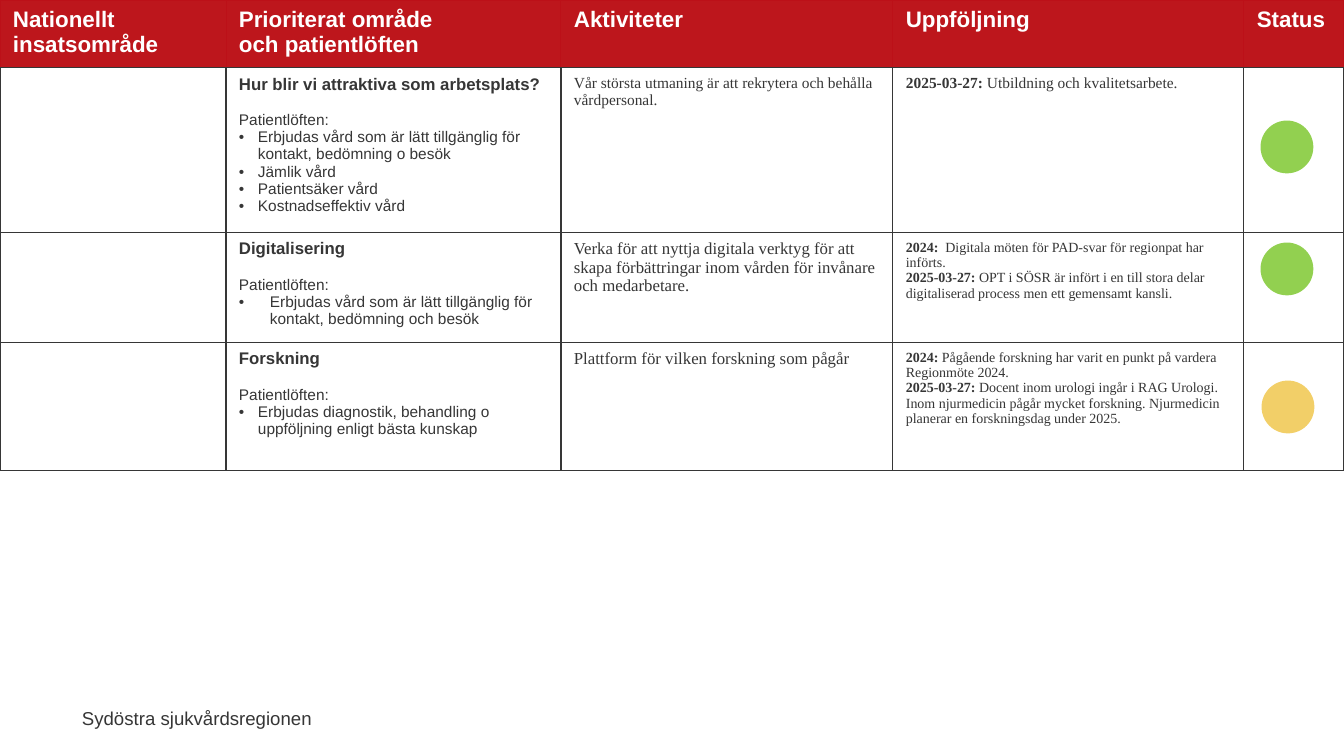
from lxml.etree import SubElement
from pptx import Presentation
from pptx.dml.color import RGBColor
from pptx.enum.shapes import MSO_SHAPE as Shape
from pptx.enum.text import PP_ALIGN as Align
from pptx.oxml.ns import qn
from pptx.util import Emu, Pt

PX = 914400 / 100.8
DARK = RGBColor(0x36, 0x36, 0x36)
RED = RGBColor(0xBC, 0x10, 0x18)
HEADER_FILL = RGBColor(0xBD, 0x16, 0x1C)
WHITE = RGBColor(0xFF, 0xFF, 0xFF)
GREEN = RGBColor(0x92, 0xD0, 0x50)
YELLOW = RGBColor(0xF2, 0xCF, 0x68)
SANS, SERIF = "Arial", "Times New Roman"

COLUMNS = [226, 335, 332, 351, 100]
ROWS = [67, 165, 110, 128]
HEADERS = ["Nationellt insatsområde", "Prioriterat område\voch patientlöften",
           "Aktiviteter", "Uppföljning", "Status"]
# Each area: heading, bullet indent, promises, activity, its size, follow-ups, their size
AREAS = [
    ("Hur blir vi attraktiva som arbetsplats?", 19,
     ["Erbjudas vård som är lätt tillgänglig för kontakt, bedömning o besök",
      "Jämlik vård", "Patientsäker vård", "Kostnadseffektiv vård"],
     "Vår största utmaning är att rekrytera och behålla vårdpersonal.", 11,
     [("2025-03-27: ", "Utbildning och kvalitetsarbete.")], 11),
    ("Digitalisering", 31,
     ["Erbjudas vård som är lätt tillgänglig för kontakt, bedömning och besök"],
     "Verka för att nyttja digitala verktyg för att skapa förbättringar inom "
     "vården för invånare och medarbetare.", 12,
     [("2024: ", " Digitala möten för PAD-svar för regionpat har införts."),
      ("2025-03-27: ", "OPT i SÖSR är infört i en till stora delar "
       "digitaliserad process men ett gemensamt kansli.")], 10),
    ("Forskning", 19,
     ["Erbjudas diagnostik, behandling o uppföljning enligt bästa kunskap"],
     "Plattform för vilken forskning som pågår", 12,
     [("2024: ", "Pågående forskning har varit en punkt på vardera Regionmöte 2024."),
      ("2025-03-27: ", "Docent inom urologi ingår i RAG Urologi. Inom njurmedicin "
       "pågår mycket forskning. Njurmedicin planerar en forskningsdag under 2025.")], 10),
]
STATUSES = [(1262, 122, GREEN), (1262, 244, GREEN), (1263, 382, YELLOW)]


def px(n):
    return Emu(round(n * PX))


def add_text(tf, text, lead="", size=11, font=SANS, color=DARK, bold=False,
             before=0, indent=0, align=Align.LEFT):
    """Add a paragraph, with an optional bold lead and a bullet if indented."""
    p = tf.add_paragraph() if tf.paragraphs[0].runs else tf.paragraphs[0]
    p.alignment = align
    if before:
        p.space_before = Pt(before)
    if indent:
        pPr = p._p.get_or_add_pPr()
        pPr.set("marL", str(px(indent)))
        pPr.set("indent", str(-px(indent)))
        SubElement(pPr, qn("a:buFont"), typeface=SANS)
        SubElement(pPr, qn("a:buChar"), char="•")
    for part, is_bold in ((lead, True), (text, bold)):
        if part:
            # A vertical tab in the text becomes a line break
            for i, line in enumerate(part.split("\v")):
                if i:
                    p.add_line_break()
                r = p.add_run()
                r.text = line
                r.font.size, r.font.name, r.font.bold = Pt(size), font, is_bold
                r.font.color.rgb = color


def format_cell(cell, is_header):
    cell.margin_left = cell.margin_right = px(13)
    cell.margin_top = cell.margin_bottom = px(7)
    tcPr = cell._tc.get_or_add_tcPr()
    for side in "LRTB":
        is_red = is_header and side != "B"
        ln = SubElement(tcPr, qn(f"a:ln{side}"), w=str(Pt(0.75 if is_red else 1)))
        fill = SubElement(ln, qn("a:solidFill"))
        SubElement(fill, qn("a:srgbClr"), val=str(RED if is_red else DARK))
    if is_header:
        cell.fill.solid()
        cell.fill.fore_color.rgb = HEADER_FILL
    else:
        cell.fill.background()


def add_plan_table(slide):
    frame = slide.shapes.add_table(len(ROWS), len(COLUMNS), 0, 0,
                                   px(sum(COLUMNS)), px(sum(ROWS)))
    table = frame.table
    table.first_row = table.horz_banding = False
    for column, width in zip(table.columns, COLUMNS):
        column.width = px(width)
    for i, (row, height) in enumerate(zip(table.rows, ROWS)):
        row.height = px(height)
        for cell in row.cells:
            format_cell(cell, i == 0)
    for i, header in enumerate(HEADERS):
        add_text(table.cell(0, i).text_frame, header, size=16, color=WHITE, bold=True)
    for i, area in enumerate(AREAS, 1):
        heading, indent, promises, activity, activity_size, notes, note_size = area
        tf = table.cell(i, 1).text_frame
        add_text(tf, heading, size=12, bold=True)
        add_text(tf, "Patientlöften:", before=13)
        for promise in promises:
            add_text(tf, promise, indent=indent)
        add_text(table.cell(i, 2).text_frame, activity, size=activity_size, font=SERIF)
        for date, note in notes:
            add_text(table.cell(i, 3).text_frame, note, lead=date,
                     size=note_size, font=SERIF)


def add_status(slide, x, y, color):
    sp = slide.shapes.add_shape(Shape.FLOWCHART_CONNECTOR, px(x), px(y), px(50), px(50))
    sp.shadow.inherit = False
    sp.fill.solid()
    sp.fill.fore_color.rgb = sp.line.color.rgb = color
    sp.line.width = Pt(2)


def add_footer(slide, text):
    tf = slide.shapes.add_textbox(px(70), px(702), px(252), px(33)).text_frame
    tf.word_wrap = False
    add_text(tf, text, size=13.3, align=Align.RIGHT)


def main():
    prs = Presentation()
    prs.slide_width, prs.slide_height = px(1344), px(756)
    slide = prs.slides.add_slide(prs.slide_layouts[6])
    add_footer(slide, "Sydöstra sjukvårdsregionen")
    add_plan_table(slide)
    for x, y, color in STATUSES:
        add_status(slide, x, y, color)
    prs.save("out.pptx")


if __name__ == "__main__":
    main()
